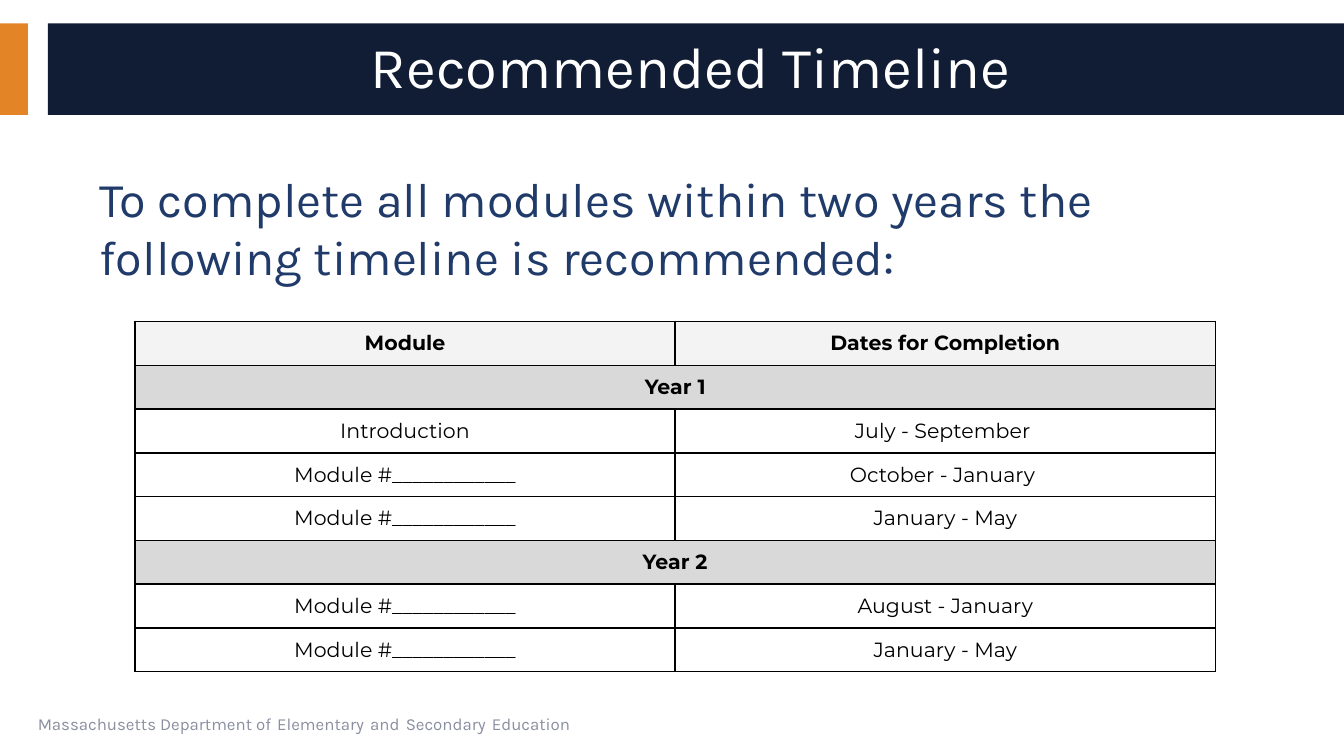
from lxml.etree import SubElement
from pptx import Presentation
from pptx.dml.color import RGBColor
from pptx.enum.shapes import MSO_SHAPE
from pptx.enum.text import MSO_ANCHOR, MSO_AUTO_SIZE, PP_ALIGN
from pptx.oxml.ns import qn
from pptx.util import Pt

ORANGE = RGBColor(0xE3, 0x85, 0x26)
NAVY = RGBColor(0x10, 0x1D, 0x34)
BLUE = RGBColor(0x20, 0x3B, 0x6A)
GRAY = RGBColor(0x8A, 0x8F, 0xA0)
HEADER = RGBColor(0xF3, 0xF3, 0xF3)
BAND = RGBColor(0xD9, 0xD9, 0xD9)
WHITE = RGBColor(0xFF, 0xFF, 0xFF)
BLACK = RGBColor(0, 0, 0)

MODULE = "Module #____________"
ROWS = [
    ("Module", "Dates for Completion"),
    ("Year 1",),
    ("Introduction", "July - September "),
    (MODULE, "October - January "),
    (MODULE, "January - May"),
    ("Year 2",),
    (MODULE, "August - January"),
    (MODULE, "January - May"),
]
FOOTER = ["Massachusetts Department of", "Elementary", "and", "Secondary", "Education"]


def set_attrs(obj, **values):
    for name, value in values.items():
        setattr(obj, name, value)


def set_font(font, color, **values):
    set_attrs(font, **values)
    font.color.rgb = color


def set_box(sp, box, anchor=MSO_ANCHOR.TOP):
    for name, value in zip(("left", "top", "width", "height"), box):
        setattr(sp, name, Pt(value))
    tf = sp.text_frame
    set_attrs(tf, word_wrap=True, auto_size=MSO_AUTO_SIZE.NONE,
              vertical_anchor=anchor, margin_left=Pt(5.25), margin_right=Pt(5.25),
              margin_top=Pt(2.63), margin_bottom=Pt(2.63))
    return tf


def add_bar(s, box, color):
    sp = s.shapes.add_shape(MSO_SHAPE.RECTANGLE, *map(Pt, box))
    sp.shadow.inherit = False
    sp.fill.solid()
    sp.fill.fore_color.rgb = color
    sp.line.fill.background()


def add_title(s, box, text):
    left, top, width, height = box
    add_bar(s, (0, top, 15, height), ORANGE)
    add_bar(s, (left, top, width, height), NAVY)
    title = s.shapes.title
    s.shapes._spTree.append(title._element)
    tf = set_box(title, (left + 8, top + 5, width - 22, height - 9), MSO_ANCHOR.MIDDLE)
    tf.text = text
    p = tf.paragraphs[0]
    set_attrs(p, alignment=PP_ALIGN.CENTER, line_spacing=0.9)
    set_font(p.runs[0].font, WHITE, name="Karla", size=Pt(31))


def add_body(s, box, text):
    tf = set_box(s.placeholders[1], box)
    tf.text = text
    p = tf.paragraphs[0]
    pPr = p._p.get_or_add_pPr()
    pPr.set("marL", "0")
    pPr.set("indent", "0")
    SubElement(pPr, qn("a:buNone"))
    p.space_before = Pt(0)
    set_font(p.runs[0].font, BLUE, name="Karla", size=Pt(26))


def add_footer(s, box, words):
    p = set_box(s.shapes.add_textbox(0, 0, 0, 0), box).paragraphs[0]
    for i, word in enumerate(words):
        if i:
            r = p.add_run()
            r.text = " "
            set_font(r.font, BLUE, name="Karla", size=Pt(14))
        r = p.add_run()
        r.text = word
        set_font(r.font, GRAY, name="Karla", size=Pt(9))


def add_borders(cell):
    tcPr = cell._tc.get_or_add_tcPr()
    for side in ("lnL", "lnR", "lnT", "lnB"):
        ln = SubElement(tcPr, qn(f"a:{side}"), w=str(Pt(1)))
        fill = SubElement(ln, qn("a:solidFill"))
        SubElement(fill, qn("a:srgbClr"), val=str(BLACK))


def add_timeline(s, box, rows):
    table = s.shapes.add_table(len(rows), 2, *map(Pt, box)).table
    set_attrs(table, first_row=False, horz_banding=False)
    for i, texts in enumerate(rows):
        is_year = len(texts) == 1
        bold = is_year or i == 0
        for cell in table.rows[i].cells:
            add_borders(cell)
            if bold:
                cell.fill.solid()
                cell.fill.fore_color.rgb = BAND if is_year else HEADER
            else:
                cell.fill.background()
        if is_year:
            table.cell(i, 0).merge(table.cell(i, 1))
        for j, text in enumerate(texts):
            cell = table.cell(i, j)
            set_attrs(cell, text=text, margin_left=Pt(5), margin_right=Pt(5),
                      margin_top=Pt(5), margin_bottom=Pt(5))
            p = cell.text_frame.paragraphs[0]
            p.alignment = PP_ALIGN.CENTER
            set_font(p.runs[0].font, BLACK, name="Montserrat", size=Pt(11), bold=bold)


def main():
    prs = Presentation()
    set_attrs(prs, slide_width=Pt(720), slide_height=Pt(405))
    s = prs.slides.add_slide(prs.slide_layouts[1])
    add_title(s, (25.75, 12.5, 694.25, 49), "Recommended Timeline")
    add_body(s, (48, 88, 590, 266),
             "To complete all modules within two years the following timeline is recommended:")
    add_footer(s, (15, 375, 456, 22), FOOTER)
    add_timeline(s, (72.25, 172.25, 579, 187.5), ROWS)
    prs.save("out.pptx")


if __name__ == "__main__":
    main()
